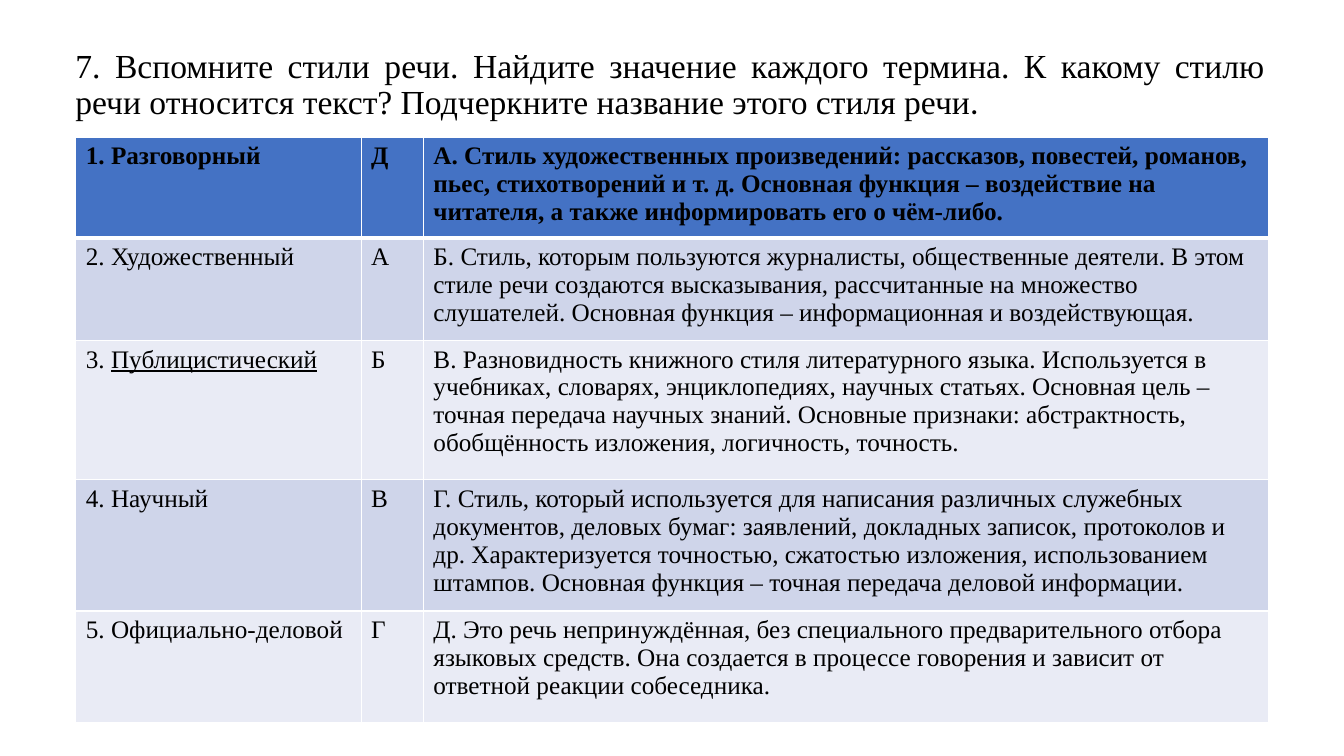
"""Build a slide with a matching table of Russian speech styles."""
from dataclasses import dataclass

from lxml import etree
from pptx import Presentation
from pptx.dml.color import RGBColor
from pptx.enum.text import MSO_ANCHOR, PP_ALIGN
from pptx.oxml.ns import qn
from pptx.util import Cm, Pt

JUSTIFY = PP_ALIGN.JUSTIFY
MIDDLE = MSO_ANCHOR.MIDDLE


@dataclass(frozen=True)
class Theme:
    text: str = "000000"
    border: str = "FFFFFF"
    header: str = "4472C4"
    bands: tuple = ("E9EBF5", "CFD5EA")
    font: str = "Times New Roman"
    stop_font: str = "Calibri"
    title_size: int = 24
    table_size: int = 18


THEME = Theme()


def style_font(font, size, bold=False):
    font.name = THEME.font
    font.size = Pt(size)
    font.bold = bold
    font.color.rgb = RGBColor.from_string(THEME.text)


def add_border(cell, side, width):
    line = etree.SubElement(cell._tc.get_or_add_tcPr(), qn(f"a:ln{side}"), w=str(Pt(width)))
    fill = etree.SubElement(line, qn("a:solidFill"))
    etree.SubElement(fill, qn("a:srgbClr"), val=THEME.border)


presentation = Presentation()
presentation.slide_width = Cm(33.87)
presentation.slide_height = Cm(19.05)
slide = presentation.slides.add_slide(presentation.slide_layouts[6])

task = slide.shapes.add_textbox(Cm(1.65), Cm(1.02), Cm(30.48), Cm(2.26)).text_frame
task.word_wrap = True
task.vertical_anchor = MIDDLE
question = task.paragraphs[0]
question.alignment = JUSTIFY
question.line_spacing = 0.9
style_font(question.font, THEME.title_size)
question.add_run().text = (
    "7. Вспомните стили речи. Найдите значение каждого термина. "
    "К какому стилю речи относится текст? Подчеркните название этого стиля речи"
)
full_stop = question.add_run()
full_stop.text = "."
full_stop.font.name = THEME.stop_font

correct_style = "Публицистический"
styles = [
    ("Разговорный", "Д",
     "А. Стиль художественных произведений: рассказов, повестей, романов, пьес, "
     "стихотворений и т. д. Основная функция – воздействие на читателя, а также "
     "информировать его о чём-либо."),
    ("Художественный", "А",
     "Б. Стиль, которым пользуются журналисты, общественные деятели. В этом стиле речи "
     "создаются высказывания, рассчитанные на множество слушателей. Основная функция – "
     "информационная и воздействующая."),
    (correct_style, "Б",
     "В. Разновидность книжного стиля литературного языка. Используется в учебниках, "
     "словарях, энциклопедиях, научных статьях. Основная цель – точная передача научных "
     "знаний. Основные признаки: абстрактность, обобщённость изложения, логичность, точность."),
    ("Научный", "В",
     "Г. Стиль, который используется для написания различных служебных документов, деловых "
     "бумаг: заявлений, докладных записок, протоколов и др. Характеризуется точностью, "
     "сжатостью изложения, использованием штампов. Основная функция – точная передача "
     "деловой информации."),
    ("Официально-деловой", "Г",
     "Д. Это речь непринуждённая, без специального предварительного отбора языковых средств. "
     "Она создается в процессе говорения и зависит от ответной реакции собеседника."),
]
column_widths = [7.19, 1.57, 21.31]
row_heights = [2.49, 2.59, 3.51, 2.82, 2.82]

matching = slide.shapes.add_table(
    len(styles), len(column_widths),
    Cm(1.91), Cm(3.45), Cm(sum(column_widths)), Cm(sum(row_heights)),
).table
for column, width in zip(matching.columns, column_widths):
    column.width = Cm(width)

for index, (style, answer, definition) in enumerate(styles):
    matching.rows[index].height = Cm(row_heights[index])
    is_header = index == 0
    band = THEME.header if is_header else THEME.bands[index % 2]
    entries = [(f"{index + 1}. ", style), (answer,), (definition,)]
    for cell, pieces in zip(matching.rows[index].cells, entries):
        top_width = 3 if index == 1 else 1
        bottom_width = 3 if is_header else 1
        for side, width in zip("LRTB", (1, 1, top_width, bottom_width)):
            add_border(cell, side, width)
        cell.fill.solid()
        cell.fill.fore_color.rgb = RGBColor.from_string(band)
        paragraph = cell.text_frame.paragraphs[0]
        style_font(paragraph.font, THEME.table_size, is_header)
        for piece in pieces:
            run = paragraph.add_run()
            run.text = piece
            if piece == correct_style:
                run.font.underline = True

presentation.save("out.pptx")
